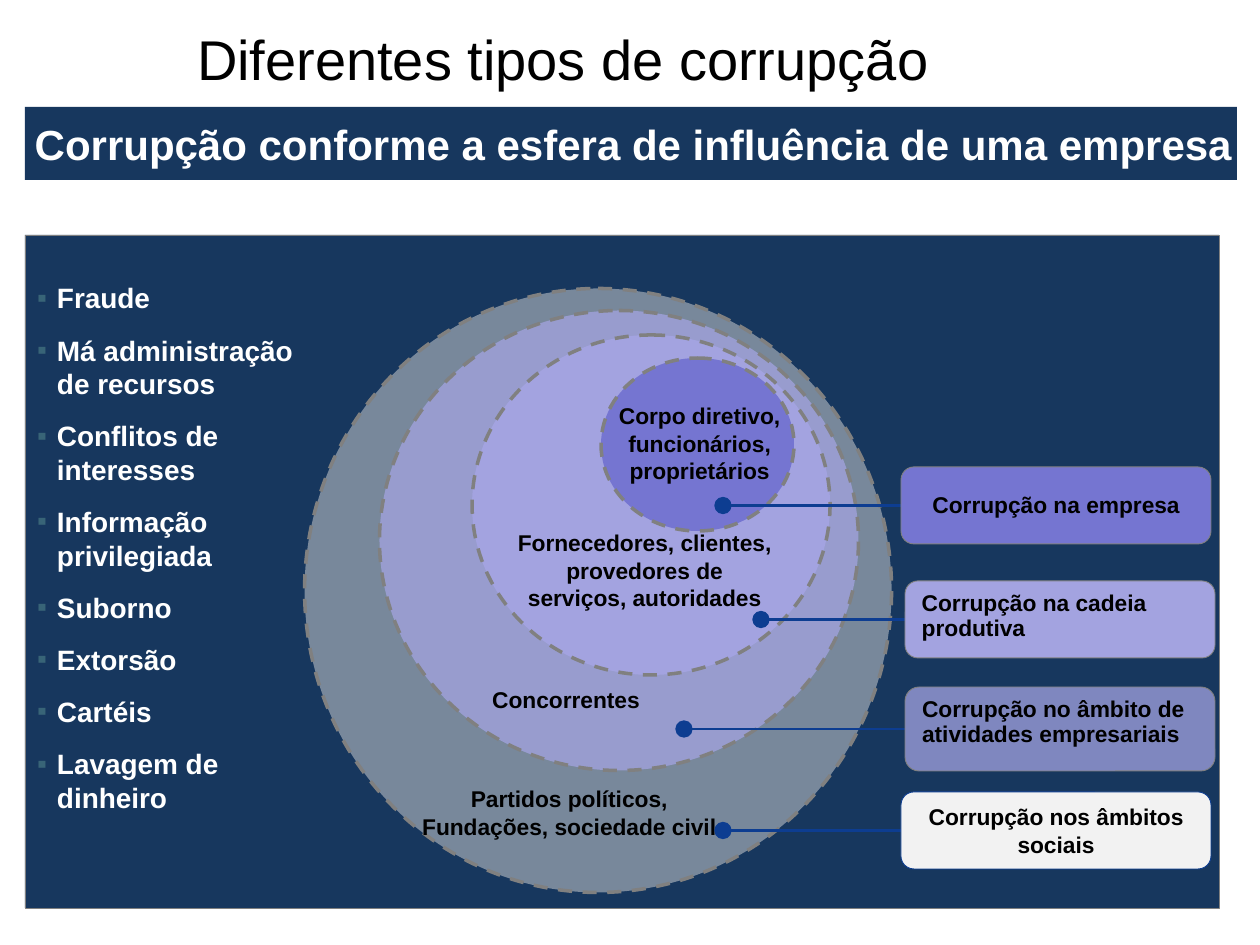
from lxml import etree
from pptx import Presentation
from pptx.dml.color import RGBColor
from pptx.enum.dml import MSO_LINE
from pptx.enum.shapes import MSO_CONNECTOR, MSO_SHAPE
from pptx.enum.text import MSO_ANCHOR, MSO_AUTO_SIZE, PP_ALIGN
from pptx.oxml.ns import qn
from pptx.util import Emu, Pt

RECT, OVAL, ROUND = MSO_SHAPE.RECTANGLE, MSO_SHAPE.OVAL, MSO_SHAPE.ROUNDED_RECTANGLE
STRAIGHT, DASH = MSO_CONNECTOR.STRAIGHT, MSO_LINE.DASH
TOP, MIDDLE = MSO_ANCHOR.TOP, MSO_ANCHOR.MIDDLE
LEFT, CENTER = PP_ALIGN.LEFT, PP_ALIGN.CENTER
NO_FIT = MSO_AUTO_SIZE.NONE

NAVY = RGBColor(0x17, 0x37, 0x5E)
BLUE = RGBColor(0x0D, 0x3D, 0x91)
VIOLET = RGBColor(0x75, 0x75, 0xD1)
LILAC = RGBColor(0xA3, 0xA3, 0xE0)
SILVER = RGBColor(0xD9, 0xD9, 0xD9)
PALE = RGBColor(0xF2, 0xF2, 0xF2)
GRAY = RGBColor(0x80, 0x80, 0x80)
TEAL = RGBColor(0x38, 0x64, 0x77)
BLACK = RGBColor(0, 0, 0)
WHITE = RGBColor(255, 255, 255)

FONT = "Arial"
PX_PER_INCH = 126

ITEMS = ["Fraude", "Má administração de recursos", "Conflitos de interesses",
         "Informação privilegiada", "Suborno", "Extorsão", "Cartéis",
         "Lavagem de dinheiro"]

RINGS = [
    ((0, 8, 604, 587), SILVER, 50, (120, 490, 306, 68),
     "Partidos políticos, Fundações, sociedade civil"),
    ((93, 12, 460, 479), LILAC, 75, (177, 391, 186, 40), "Concorrentes"),
    ((185, 37, 340, 358), LILAC, 100, (219, 234, 259, 96),
     "Fornecedores, clientes, provedores de serviços, autoridades"),
    ((315, 59, 173, 193), VIOLET, 100, (313, 107, 181, 98),
     "Corpo diretivo, funcionários, proprietários"),
]

CALLOUTS = [
    ((0, 0, 310, 77), 178, VIOLET, 100, GRAY, True, 0.93, "Corrupção na empresa"),
    ((4, 114, 310, 77), 144, LILAC, 100, GRAY, False, 0.93,
     "Corrupção na cadeia produtiva"),
    ((4, 220, 310, 84), 221, LILAC, 75, GRAY, False, 0.93,
     "Corrupção no âmbito de atividades empresariais"),
    ((0, 325, 310, 77), 178, PALE, 100, BLUE, True, 1.0,
     "Corrupção nos âmbitos sociais"),
]


def px(n):
    return Emu(round(n * 914400 / PX_PER_INCH))


def inside(box, part):
    return box[0] + part[0], box[1] + part[1], part[2], part[3]


def move(sp, box):
    sp.left, sp.top, sp.width, sp.height = map(px, box)


def add_run(p, text, size, color, bold=True):
    r = p.add_run()
    r.text = text
    r.font.name = FONT
    r.font.size = Pt(size)
    r.font.bold = bold
    r.font.color.rgb = color


def set_frame(tf, insets, anchor=TOP, wrap=True):
    tf.margin_left, tf.margin_top, tf.margin_right, tf.margin_bottom = map(px, insets)
    tf.vertical_anchor = anchor
    tf.word_wrap = wrap
    tf.auto_size = NO_FIT


def add_block(s, kind, box, fill, alpha=100, line=None, width=0.5):
    sp = s.shapes.add_shape(kind, *map(px, box))
    sp.shadow.inherit = False
    sp.fill.solid()
    sp.fill.fore_color.rgb = fill
    if alpha < 100:
        clr = sp.fill._xPr.find(".//" + qn("a:srgbClr"))
        etree.SubElement(clr, qn("a:alpha")).set("val", str(alpha * 1000))
    if line is None:
        sp.line.fill.background()
    else:
        sp.line.color.rgb = line
        sp.line.width = Pt(width)
    return sp


def add_title(s, box):
    sp = s.shapes.title
    move(sp, box)
    set_frame(sp.text_frame, (11, 5, 11, 5))
    p = sp.text_frame.paragraphs[0]
    p.alignment = LEFT
    add_run(p, "Diferentes tipos de corrupção", 32, BLACK, False)


def add_banner(s, box):
    sp = add_block(s, RECT, box, NAVY)
    set_frame(sp.text_frame, (9, 9, 4, 9), MIDDLE, False)
    p = sp.text_frame.paragraphs[0]
    p.alignment = CENTER
    add_run(p, "Corrupção conforme a esfera de influência de uma empresa", 24, WHITE)


def add_rings(s, box):
    for ring, fill, alpha, label, text in RINGS:
        sp = add_block(s, OVAL, inside(box, ring), fill, alpha, GRAY, 2)
        sp.line.dash_style = DASH
        sp.rotation = 90
        tb = s.shapes.add_textbox(*map(px, inside(box, label)))
        set_frame(tb.text_frame, (0, 6, 0, 6))
        p = tb.text_frame.paragraphs[0]
        p.alignment = CENTER
        add_run(p, text, 13, BLACK)


def add_bullet(p):
    pPr = p._p.get_or_add_pPr()
    pPr.set("marL", str(px(21)))
    pPr.set("indent", str(-px(20)))
    clr = etree.SubElement(pPr, qn("a:buClr"))
    etree.SubElement(clr, qn("a:srgbClr")).set("val", str(TEAL))
    etree.SubElement(pPr, qn("a:buFont")).set("typeface", FONT)
    etree.SubElement(pPr, qn("a:buChar")).set("char", "▪")


def add_list(s, box):
    sp = s.placeholders[1]
    move(sp, box)
    s.shapes._spTree.append(sp._element)
    tf = sp.text_frame
    set_frame(tf, (11, 5, 11, 5))
    for i, item in enumerate(ITEMS):
        p = tf.add_paragraph() if i else tf.paragraphs[0]
        p.space_before = p.space_after = Pt(5.3)
        add_bullet(p)
        add_run(p, item, 16, WHITE)


def add_pointer(s, x1, x2, y):
    ln = s.shapes.add_connector(STRAIGHT, px(x1), px(y), px(x2), px(y))
    ln.line.color.rgb = BLUE
    ln.line.width = Pt(1.5)
    head = etree.SubElement(ln.line._get_or_add_ln(), qn("a:headEnd"))
    for key, value in (("type", "oval"), ("w", "lg"), ("len", "lg")):
        head.set(key, value)
    etree.SubElement(ln._element.spPr, qn("a:effectLst"))


def add_callouts(s, box):
    for part, reach, fill, alpha, line, centered, spacing, text in CALLOUTS:
        x, y, w, h = inside(box, part)
        add_pointer(s, x - reach, x, y + h / 2)
        sp = add_block(s, ROUND, (x, y, w, h), fill, alpha, line)
        insets = (5, 10, 5, 10) if centered else (13, 6, 13, 6)
        set_frame(sp.text_frame, insets, MIDDLE if centered else TOP)
        p = sp.text_frame.paragraphs[0]
        p.alignment = CENTER if centered else LEFT
        p.line_spacing = spacing
        add_run(p, text, 13, BLACK)


def main():
    prs = Presentation()
    prs.slide_width, prs.slide_height = px(1260), px(945)
    s = prs.slides.add_slide(prs.slide_layouts[1])
    add_block(s, RECT, (25, 235, 1194, 673), NAVY, line=GRAY, width=0.25)
    add_title(s, (186, 19, 874, 79))
    add_banner(s, (25, 107, 1212, 73))
    add_rings(s, (296, 289, 604, 605))
    add_list(s, (25, 276, 284, 542))
    add_callouts(s, (901, 467, 314, 402))
    prs.save("out.pptx")


if __name__ == "__main__":
    main()
